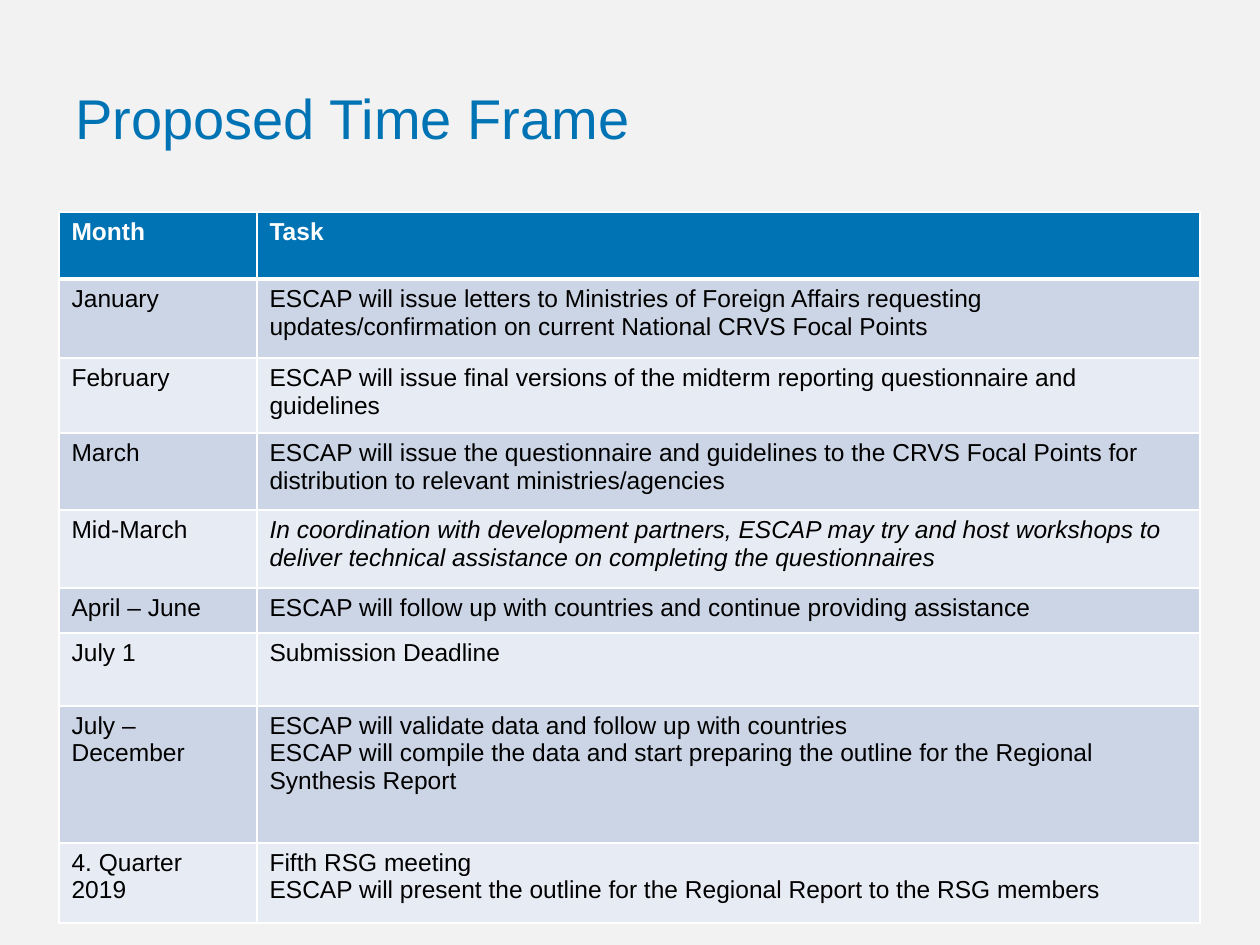
from lxml.etree import SubElement
from pptx import Presentation
from pptx.dml.color import RGBColor
from pptx.enum.text import MSO_ANCHOR
from pptx.oxml.ns import qn
from pptx.util import Emu, Pt

SCALE = 914400 / 126
FONT = "Arial"
BLUE = RGBColor(0x00, 0x73, 0xB5)
WHITE = RGBColor(0xFF, 0xFF, 0xFF)
BLACK = RGBColor(0x00, 0x00, 0x00)
GREY = RGBColor(0xF2, 0xF2, 0xF2)
DARK = RGBColor(0xCC, 0xD5, 0xE5)
LIGHT = RGBColor(0xE7, 0xEB, 0xF3)

# Each row: height, month lines, task lines
ROWS = [
    (67, ["Month"], ["Task"]),
    (79, ["January"], ["ESCAP will issue letters to Ministries of Foreign Affairs "
                       "requesting updates/confirmation on current National CRVS Focal Points"]),
    (75, ["February"], ["ESCAP will issue final versions of the midterm reporting "
                        "questionnaire and guidelines"]),
    (77, ["March"], ["ESCAP will issue the questionnaire and guidelines to the CRVS "
                     "Focal Points for distribution to relevant ministries/agencies"]),
    (78, ["Mid-March"], ["In coordination with development partners, ESCAP may try and "
                         "host workshops to deliver technical assistance on completing "
                         "the questionnaires"]),
    (45, ["April – June"], ["ESCAP will follow up with countries and continue providing "
                            "assistance"]),
    (73, ["July 1"], ["Submission Deadline"]),
    (137, ["July – December"], ["ESCAP will validate data and follow up with countries",
                                "ESCAP will compile the data and start preparing the "
                                "outline for the Regional Synthesis Report"]),
    (80, ["4. Quarter", "2019"], ["Fifth RSG meeting",
                                  "ESCAP will present the outline for the Regional "
                                  "Report to the RSG members"]),
]
COLS = [198, 943]
ITALIC = (4, 1)  # row and column of the optional task


def px(n):
    return Emu(round(n * SCALE))


class Page:
    def __init__(self, deck):
        self.slide = deck.slides.add_slide(deck.slide_layouts[6])
        fill = self.slide.background.fill
        fill.solid()
        fill.fore_color.rgb = GREY

    def text(self, frame, lines, size, color, bold=False, italic=False):
        frame.word_wrap = True
        for i, line in enumerate(lines):
            para = frame.add_paragraph() if i else frame.paragraphs[0]
            run = para.add_run()
            run.text = line
            font = run.font
            font.name, font.size = FONT, Pt(size)
            font.bold, font.italic = bold, italic
            font.color.rgb = color

    def title(self, text, x, y, w, h):
        frame = self.slide.shapes.add_textbox(px(x), px(y), px(w), px(h)).text_frame
        frame.vertical_anchor = MSO_ANCHOR.MIDDLE
        self.text(frame, [text], 32, BLUE)

    def edge(self, cell, side, width):
        line = SubElement(cell._tc.get_or_add_tcPr(), qn("a:" + side), w=str(Pt(width)))
        fill = SubElement(line, qn("a:solidFill"))
        SubElement(fill, qn("a:srgbClr"), val=str(WHITE))

    def table(self, rows, cols, x, y):
        high = sum(row[0] for row in rows)
        grid = self.slide.shapes.add_table(
            len(rows), len(cols), px(x), px(y), px(sum(cols)), px(high)).table
        for c, wide in enumerate(cols):
            grid.columns[c].width = px(wide)
        for r, (tall, *texts) in enumerate(rows):
            grid.rows[r].height = px(tall)
            head = r == 0
            shade = BLUE if head else DARK if r % 2 else LIGHT
            for c, lines in enumerate(texts):
                cell = grid.cell(r, c)
                # Borders come before the fill in the cell's XML
                for side in ("lnL", "lnR", "lnT", "lnB"):
                    thick = (head and side == "lnB") or (r == 1 and side == "lnT")
                    self.edge(cell, side, 3 if thick else 1)
                cell.fill.solid()
                cell.fill.fore_color.rgb = shade
                self.text(cell.text_frame, lines, 14, WHITE if head else BLACK,
                          bold=head, italic=(r, c) == ITALIC)


def main():
    deck = Presentation()
    deck.slide_width, deck.slide_height = px(1260), px(945)
    page = Page(deck)

    # Heading
    page.title("Proposed Time Frame", 63, 38, 1026, 158)

    # Schedule
    page.table(ROWS, COLS, 59, 212)
    deck.save("out.pptx")


if __name__ == "__main__":
    main()
